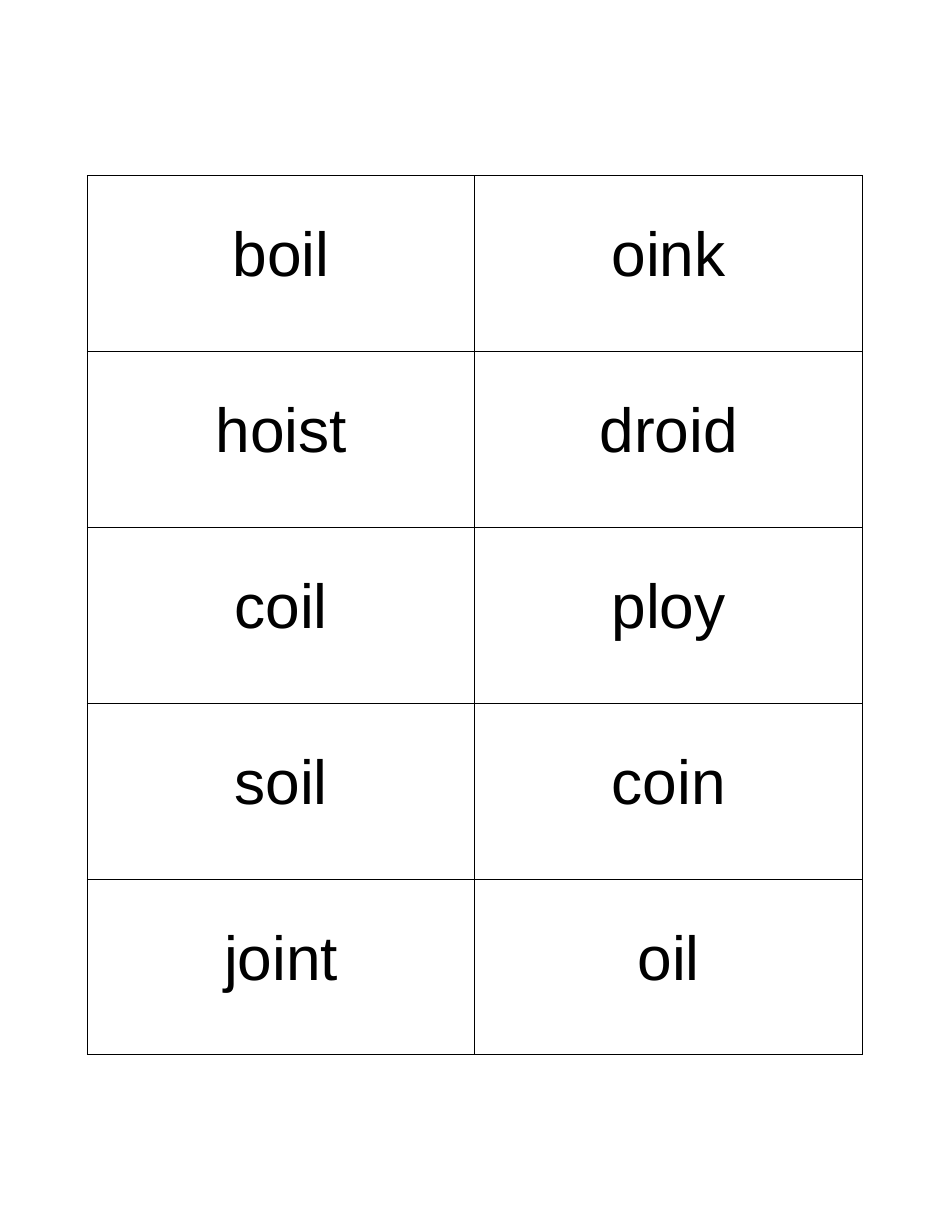
from dataclasses import dataclass

from lxml import etree
from pptx import Presentation
from pptx.dml.color import RGBColor
from pptx.enum.text import MSO_ANCHOR, PP_ALIGN
from pptx.oxml.ns import qn
from pptx.util import Inches, Pt

CENTER = PP_ALIGN.CENTER
TOP = MSO_ANCHOR.TOP
BLANK_LAYOUT = 6


@dataclass(frozen=True)
class Theme:
    font: str = "Arial"
    word_size: float = 40
    ink: str = "000000"
    border_width: float = 0.75


THEME = Theme()

WORD_ROWS = [
    ("boil", "oink"),
    ("hoist", "droid"),
    ("coil", "ploy"),
    ("soil", "coin"),
    ("joint", "oil"),
]
CARD_WIDTH = Inches(3.46)
CARD_HEIGHT = Inches(1.57)
WORD_INSET = Inches(0.4)


def draw_borders(cell):
    properties = cell._tc.get_or_add_tcPr()
    for position, side in enumerate(("a:lnL", "a:lnR", "a:lnT", "a:lnB")):
        line = etree.Element(qn(side), w=str(Pt(THEME.border_width)))
        fill = etree.SubElement(line, qn("a:solidFill"))
        etree.SubElement(fill, qn("a:srgbClr"), val=THEME.ink)
        properties.insert(position, line)


def format_card(cell, word):
    cell.text = word
    cell.fill.background()
    cell.vertical_anchor = TOP
    cell.margin_left = cell.margin_right = cell.margin_bottom = 0
    cell.margin_top = WORD_INSET
    paragraph = cell.text_frame.paragraphs[0]
    paragraph.alignment = CENTER
    paragraph.font.name = THEME.font
    paragraph.font.size = Pt(THEME.word_size)
    paragraph.font.color.rgb = RGBColor.from_string(THEME.ink)
    draw_borders(cell)


def add_word_cards(slide, left, top, width, height):
    """Fill the box with a table of equal cards, one word in each."""
    row_count, column_count = len(WORD_ROWS), len(WORD_ROWS[0])
    table = slide.shapes.add_table(
        row_count, column_count, left, top, width, height
    ).table
    table.first_row = table.horz_banding = False
    for row_index, words in enumerate(WORD_ROWS):
        for column_index, word in enumerate(words):
            format_card(table.cell(row_index, column_index), word)


def main():
    presentation = Presentation()
    presentation.slide_width = Inches(8.5)
    presentation.slide_height = Inches(11)
    slide = presentation.slides.add_slide(presentation.slide_layouts[BLANK_LAYOUT])
    width = CARD_WIDTH * len(WORD_ROWS[0])
    height = CARD_HEIGHT * len(WORD_ROWS)
    add_word_cards(slide, Inches(0.78), Inches(1.57), width, height)
    presentation.save("out.pptx")


if __name__ == "__main__":
    main()
